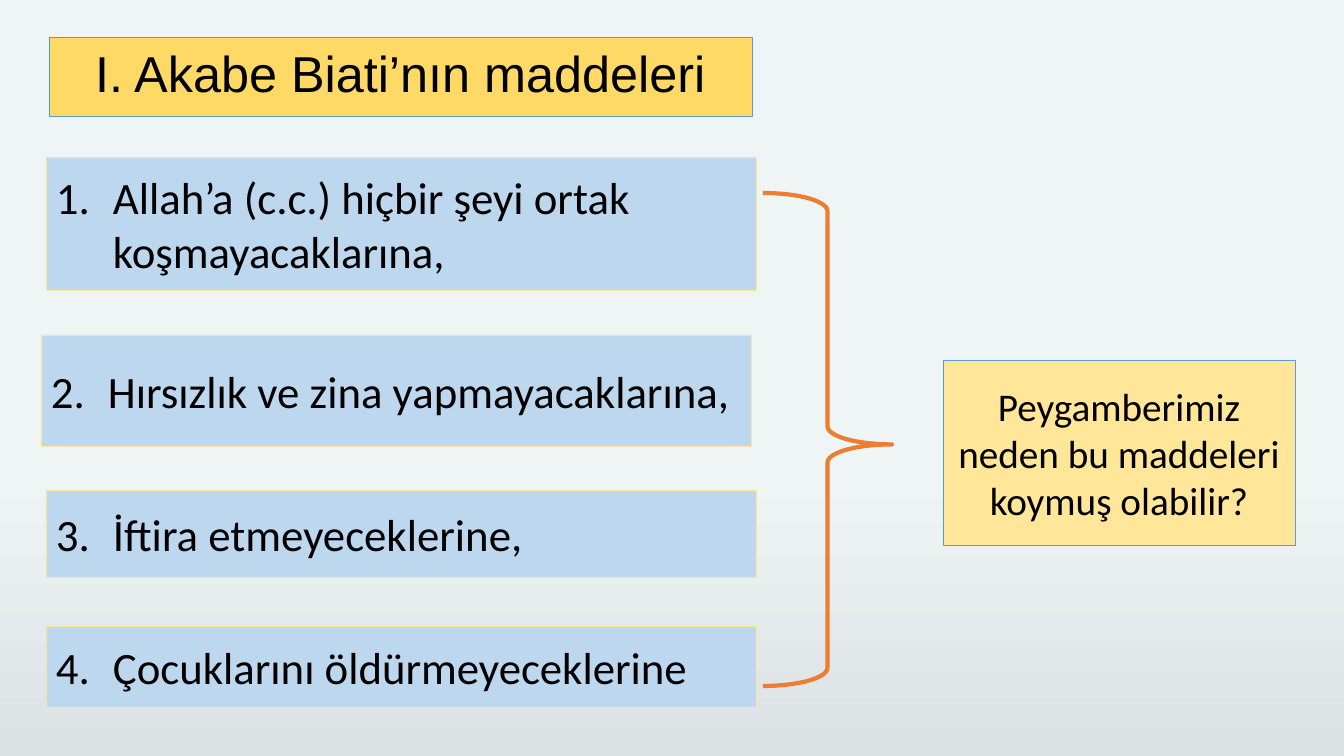
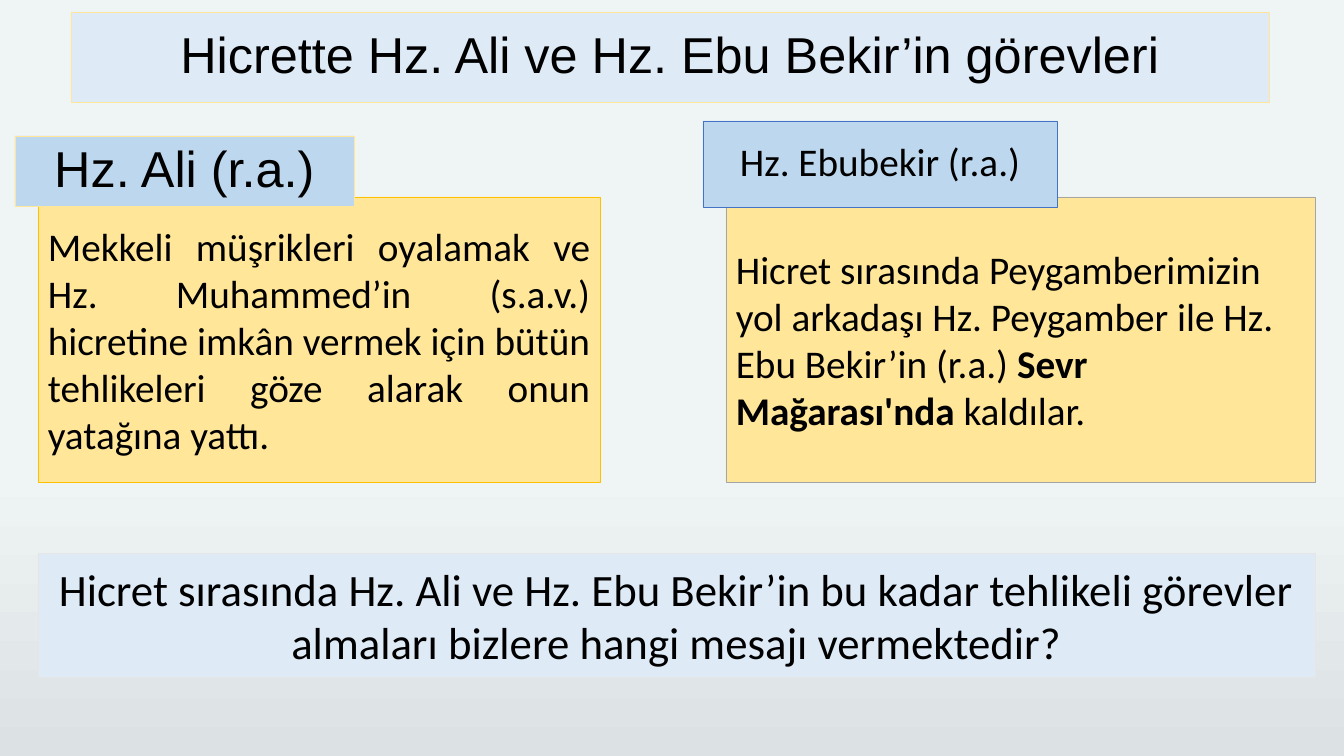
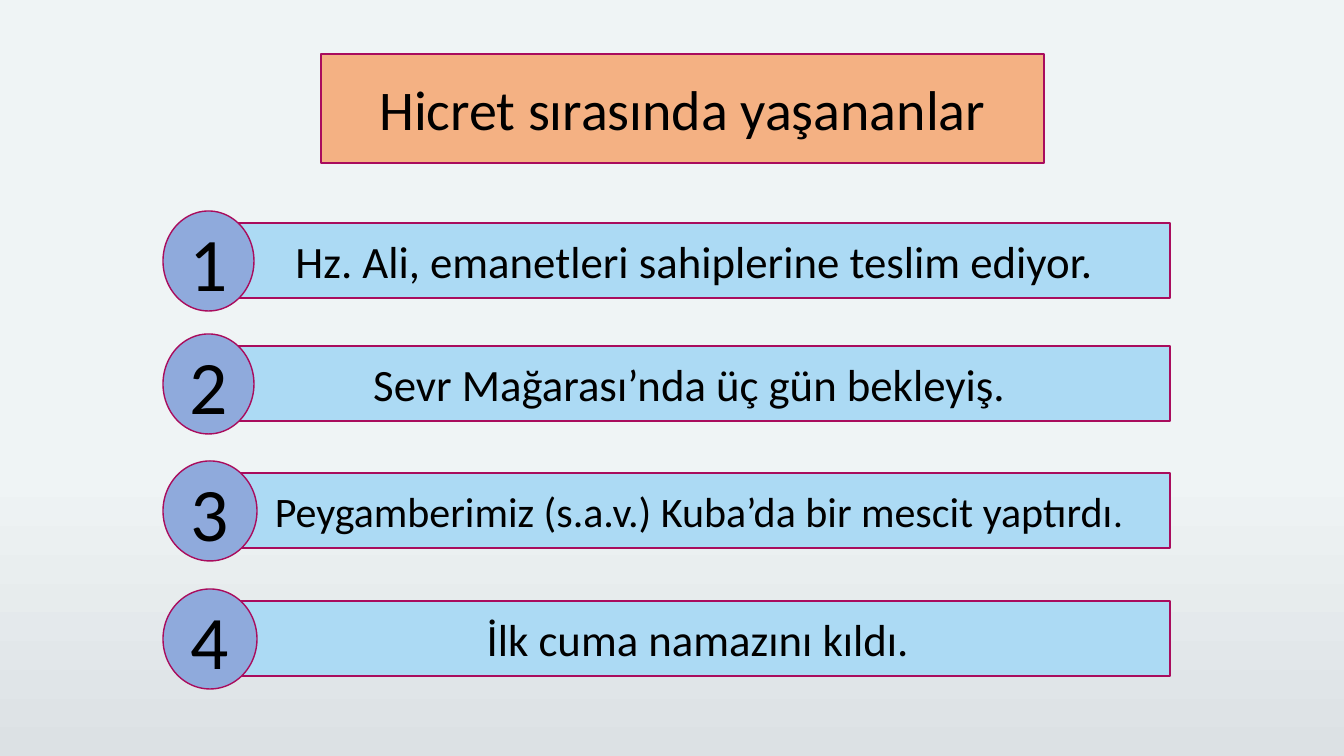
from lxml.etree import SubElement
from pptx import Presentation
from pptx.dml.color import RGBColor
from pptx.enum.shapes import MSO_SHAPE as Kind
from pptx.enum.text import MSO_ANCHOR as Anchor, PP_ALIGN as Align
from pptx.oxml.ns import qn
from pptx.util import Emu, Pt

SCALE = 12192000 / 1344
BLACK = "000000"
GOLD = "FFD966"
CREAM = "FFE699"
BLUE = "BDD7EE"
PALE = "DEEBF7"
SKY = "ACDAF4"
WINE = "A90C5D"
STEEL = "5B9BD5"


def px(n):
    return Emu(round(n * SCALE))


def color(code):
    return RGBColor.from_string(code)


class Deck:
    def __init__(self):
        self.prs = Presentation()
        self.prs.slide_width = px(1344)
        self.prs.slide_height = px(756)
        self.slide = None
        fill = self.prs.slide_master.background.fill
        fill.gradient()
        fill.gradient_angle = 270
        for stop, (code, pos) in zip(fill.gradient_stops, [("EFF4F5", 0.62), ("DCE1E4", 1)]):
            stop.color.rgb = color(code)
            stop.position = pos

    def page(self):
        self.slide = self.prs.slides.add_slide(self.prs.slide_layouts[6])

    def shape(self, kind, spot, fill, line, width):
        item = self.slide.shapes.add_shape(kind, *map(px, spot))
        item.shadow.inherit = False
        if fill:
            item.fill.solid()
            item.fill.fore_color.rgb = color(fill)
        else:
            item.fill.background()
        item.line.color.rgb = color(line)
        item.line.width = Pt(width)
        return item

    def box(self, spot, runs, fill, line, size=28, width=0.5, align=Align.CENTER,
            font="Calibri", kind=Kind.RECTANGLE, tight=False, before=0):
        frame = self.shape(kind, spot, fill, line, width).text_frame
        frame.word_wrap = True
        frame.vertical_anchor = Anchor.MIDDLE
        para = frame.paragraphs[0]
        para.alignment = align
        if tight:
            para.line_spacing = 0.9
        if before:
            para.space_before = Pt(before)
        for text, style in [(runs, {})] if isinstance(runs, str) else runs:
            run = para.add_run()
            run.text = text
            run.font.name = font
            run.font.size = Pt(style.get("size", size))
            run.font.bold = style.get("bold", False)
            run.font.color.rgb = color(BLACK)
        return para

    def title(self, spot, text, fill, line, before=0):
        self.box(spot, text, fill, line, 36, font="Arial", tight=True, before=before)

    def point(self, spot, text, num):
        para = self.box(spot, text, BLUE, CREAM, 32, align=Align.LEFT)
        props = para._p.get_or_add_pPr()
        props.set("marL", str(px(57)))
        props.set("indent", str(-px(57)))
        SubElement(props, qn("a:buFont"), typeface="+mj-lt")
        SubElement(props, qn("a:buAutoNum"), type="arabicPeriod", startAt=str(num))

    def brace(self, spot, line, curve, mid):
        item = self.shape(Kind.RIGHT_BRACE, spot, None, line, 3)
        item.adjustments[0] = curve
        item.adjustments[1] = mid

    def step(self, num, top, left, wide, runs, indent):
        para = self.box((left, top, 1170 - left, 75), runs, SKY, WINE, 32, 1)
        if indent:
            para._p.get_or_add_pPr().set("marL", str(px(indent)))
        self.box((163, top - 12, wide, 100), str(num), "8FAADC", WINE, 54, 1, kind=Kind.OVAL)


def terms(deck):
    deck.page()
    deck.title((49, 37, 703, 79), "I. Akabe Biati’nın maddeleri", GOLD, STEEL)
    rows = [
        (46, 157, 133, "Allah’a (c.c.) hiçbir şeyi ortak koşmayacaklarına,"),
        (41, 335, 111, "Hırsızlık ve zina yapmayacaklarına,"),
        (46, 490, 87, "İftira etmeyeceklerine,"),
        (46, 626, 81, "Çocuklarını öldürmeyeceklerine"),
    ]
    for num, (left, top, high, text) in enumerate(rows, 1):
        deck.point((left, top, 710, high), text, num)
    deck.brace((763, 193, 129, 493), "ED7D31", 0.14, 0.51)
    deck.box((943, 360, 352, 185), "Peygamberimiz neden bu maddeleri koymuş olabilir?", CREAM, STEEL)


def duties(deck):
    deck.page()
    deck.title((71, 12, 1198, 90), "Hicrette Hz. Ali ve Hz. Ebu Bekir’in görevleri", PALE, CREAM)
    deck.box((38, 197, 562, 285),
             "Mekkeli müşrikleri oyalamak ve Hz. Muhammed’in (s.a.v.) hicretine imkân "
             "vermek için bütün tehlikeleri göze alarak onun yatağına yattı.",
             CREAM, "FFC000", align=Align.JUSTIFY)
    deck.title((15, 136, 339, 70), "Hz. Ali (r.a.)", BLUE, CREAM, before=10)
    deck.box((726, 197, 589, 285), [
        ("Hicret sırasında Peygamberimizin yol arkadaşı Hz. Peygamber ile Hz. Ebu Bekir’in (r.a.) ", {}),
        ("Sevr Mağarası'nda ", {"bold": True}),
        ("kaldılar.", {}),
    ], CREAM, "A5A5A5", align=Align.LEFT)
    deck.box((703, 121, 354, 86), "Hz. Ebubekir (r.a.)", BLUE, "4472C4", tight=True, before=10)
    deck.box((38, 553, 1277, 124),
             "Hicret sırasında Hz. Ali ve Hz. Ebu Bekir’in bu kadar tehlikeli görevler "
             "almaları bizlere hangi mesajı vermektedir?", PALE, "E7E6E6", 32)


def events(deck):
    deck.page()
    deck.box((321, 54, 723, 109), "Hicret sırasında yaşananlar", "F4B183", WINE, 40, 1)
    mosque = [("Peygamberimiz (s.a.v.) Kuba’da bir mescit yaptırdı", {"size": 30}),
              (".", {"size": 28})]
    rows = [
        (223, 219, 91, "Hz. Ali, emanetleri sahiplerine teslim ediyor.", 0),
        (346, 209, 91, "Sevr Mağarası’nda üç gün bekleyiş.", 0),
        (473, 209, 94, mosque, 19),
        (601, 236, 94, "İlk cuma namazını kıldı. ", 0),
    ]
    for num, row in enumerate(rows, 1):
        deck.step(num, *row)


def main():
    deck = Deck()
    terms(deck)
    duties(deck)
    events(deck)
    deck.prs.save("out.pptx")


if __name__ == "__main__":
    main()
